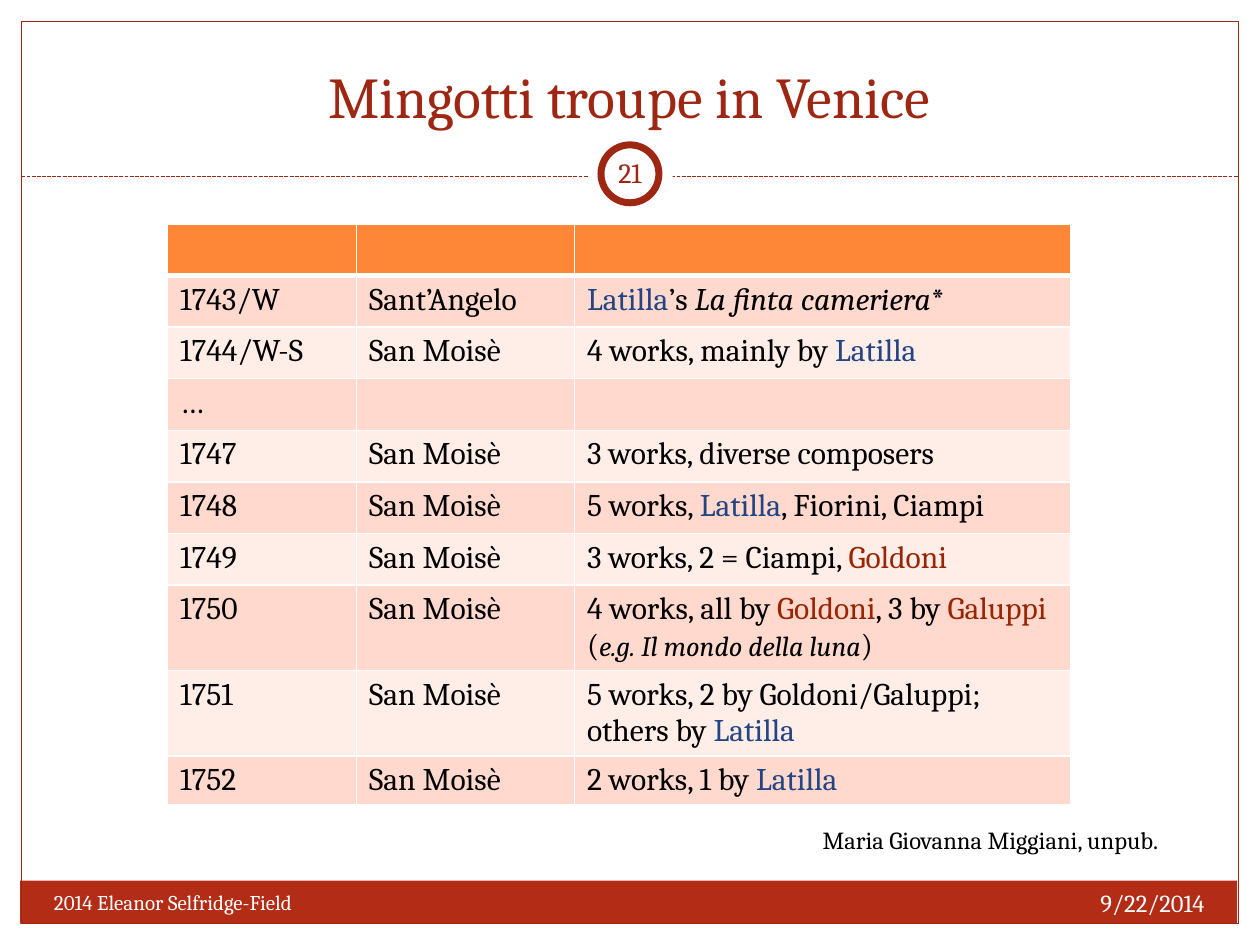
from typing import NamedTuple

from lxml import etree
from pptx import Presentation
from pptx.dml.color import RGBColor
from pptx.enum.dml import MSO_LINE
from pptx.enum.shapes import MSO_CONNECTOR, MSO_SHAPE
from pptx.enum.text import MSO_ANCHOR, PP_ALIGN
from pptx.oxml.ns import qn
from pptx.util import Inches, Pt

RECT, OVAL = MSO_SHAPE.RECTANGLE, MSO_SHAPE.OVAL
LEFT, MID, RIGHT = PP_ALIGN.LEFT, PP_ALIGN.CENTER, PP_ALIGN.RIGHT
TOP, CENTER, BOTTOM = MSO_ANCHOR.TOP, MSO_ANCHOR.MIDDLE, MSO_ANCHOR.BOTTOM
DASH = MSO_LINE.SQUARE_DOT
FONT = "Cambria"
COLORS = {
    "white": "FFFFFF", "black": "000000", "red": "9E2713", "band": "B32C16",
    "head": "FE8637", "dark": "FFD9CE", "light": "FFEDE8",
    "blue": "244583", "rust": "982602",
}


class Run(NamedTuple):
    text: str
    color: str = "black"
    size: int = 18
    italic: bool = False


class Form(NamedTuple):
    kind: int
    box: tuple
    fill: str | None = None
    line: str | None = None
    width: float = 0.75


class Note(NamedTuple):
    box: tuple
    run: Run
    align: int = LEFT
    anchor: int = TOP
    inset: float = 0.1
    wrap: bool = True


def rgb(name: str) -> RGBColor:
    return RGBColor.from_string(COLORS[name])


def add_runs(para, runs: list[Run]) -> None:
    for run in runs:
        part = para.add_run()
        part.text = run.text
        form = {"name": FONT, "size": Pt(run.size), "italic": run.italic}
        for key, value in form.items():
            setattr(part.font, key, value)
        part.font.color.rgb = rgb(run.color)


def draw_form(slide, form: Form) -> None:
    shape = slide.shapes.add_shape(form.kind, *map(Inches, form.box))
    shape.shadow.inherit = False
    if form.fill:
        shape.fill.solid()
        shape.fill.fore_color.rgb = rgb(form.fill)
    else:
        shape.fill.background()
    if form.line:
        shape.line.color.rgb = rgb(form.line)
        shape.line.width = Pt(form.width)
    else:
        shape.line.fill.background()


def draw_note(slide, note: Note) -> None:
    frame = slide.shapes.add_textbox(*map(Inches, note.box)).text_frame
    form = {"word_wrap": note.wrap, "vertical_anchor": note.anchor,
            "margin_left": Inches(note.inset), "margin_right": Inches(note.inset)}
    for key, value in form.items():
        setattr(frame, key, value)
    para = frame.paragraphs[0]
    para.alignment = note.align
    add_runs(para, [note.run])


def draw_rule(slide, y: float) -> None:
    rule = slide.shapes.add_connector(
        MSO_CONNECTOR.STRAIGHT, *map(Inches, (0.17, y, 9.83, y)))
    rule.line.color.rgb = rgb("red")
    rule.line.width = Pt(0.75)
    rule.line.dash_style = DASH
    etree.SubElement(rule._element.spPr, qn("a:effectLst"))


def set_edge(cell, side: str, width: float) -> None:
    edge = etree.SubElement(cell._tc.get_or_add_tcPr(), qn(f"a:ln{side}"),
                            w=str(Pt(width)))
    fill = etree.SubElement(edge, qn("a:solidFill"))
    etree.SubElement(fill, qn("a:srgbClr"), val=COLORS["white"])


def draw_table(slide, rows: list, widths: list, heights: list) -> None:
    box = (1.33, 1.78, sum(widths), sum(heights))
    table = slide.shapes.add_table(
        len(rows), len(widths), *map(Inches, box)).table
    for col, width in zip(table.columns, widths):
        col.width = Inches(width)
    for i, (row, height) in enumerate(zip(rows, heights)):
        table.rows[i].height = Inches(height)
        shade = "head" if i == 0 else "dark" if i % 2 else "light"
        for j, runs in enumerate(row):
            cell = table.cell(i, j)
            # Borders come before the fill; a thick line closes the header
            edges = {"L": 1, "R": 1, "T": 3 if i == 1 else 1, "B": 1 if i else 3}
            for side, width in edges.items():
                set_edge(cell, side, width)
            cell.fill.solid()
            cell.fill.fore_color.rgb = rgb(shade)
            para = cell.text_frame.paragraphs[0]
            para.font.size = Pt(18)
            add_runs(para, runs)


# Text of the table
LATILLA = Run("Latilla", "blue")
GOLDONI = Run("Goldoni", "rust")
WORKS = [
    ("1743/W", "Sant’Angelo", [LATILLA, Run("’s "),
                               Run("La finta cameriera", italic=True), Run("*")]),
    ("1744/W-S", "San Moisè", [Run("4 works, mainly by "), LATILLA]),
    ("…", "", []),
    ("1747", "San Moisè", [Run("3 works, diverse composers")]),
    ("1748", "San Moisè", [Run("5 works, "), LATILLA, Run(", Fiorini, Ciampi")]),
    ("1749", "San Moisè", [Run("3 works, 2 = Ciampi, "), GOLDONI]),
    ("1750", "San Moisè", [Run("4 works, all by "), GOLDONI, Run(", 3 by "),
                           Run("Galuppi ", "rust"), Run("("),
                           Run("e.g. Il mondo della luna", size=16, italic=True),
                           Run(")")]),
    ("1751", "San Moisè", [Run("5 works, 2 by Goldoni/Galuppi; others by "), LATILLA]),
    ("1752", "San Moisè", [Run("2 works, 1 by "), LATILLA]),
]
ROWS = [[[], [], []]] + [
    [[Run(year)], [Run(house)] if house else [], works]
    for year, house, works in WORKS]

# Frame, footer band and number badge
FRAME = [Form(RECT, (0.16, 6.99, 9.66, 0.34), "band"),
         Form(RECT, (0.17, 0.17, 9.66, 7.16), line="red")]
BADGE = [Form(OVAL, (4.67, 1.05, 0.67, 0.67), "white"),
         Form(OVAL, (4.77, 1.15, 0.46, 0.46), "white", "red", 4)]
NOTES = [
    Note((6.33, 7, 3.33, 0.4), Run("9/22/2014", "white", 14), RIGHT),
    Note((0.33, 7.01, 3.92, 0.4), Run("2014 Eleanor Selfridge-Field", "white", 12)),
    Note((4.75, 1.13, 0.5, 0.48), Run("21", "red", 16), MID, CENTER, 0.05),
    Note((6.43, 6.5, 3.13, 0.34),
         Run("Maria Giovanna Miggiani, unpub.", size=14), wrap=False),
]


def main() -> None:
    deck = Presentation()
    deck.slide_width, deck.slide_height = Inches(10), Inches(7.5)
    slide = deck.slides.add_slide(deck.slide_layouts[5])

    # Title
    title = slide.shapes.title
    place = zip(("left", "top", "width", "height"), (0.33, 0.25, 9.33, 0.83))
    for key, value in place:
        setattr(title, key, Inches(value))
    title.text_frame.vertical_anchor = BOTTOM
    para = title.text_frame.paragraphs[0]
    para.alignment = MID
    add_runs(para, [Run("Mingotti troupe in Venice", "red", 33)])

    # Frame and badge, with the rule between them
    for form in FRAME:
        draw_form(slide, form)
    draw_rule(slide, 1.4)
    for form in BADGE:
        draw_form(slide, form)

    # Table and small texts
    draw_table(slide, ROWS, [1.5, 1.73, 3.94],
               [0.4] + [0.41] * 6 + [0.67, 0.67, 0.38])
    for note in NOTES:
        draw_note(slide, note)
    deck.save("out.pptx")


if __name__ == "__main__":
    main()
